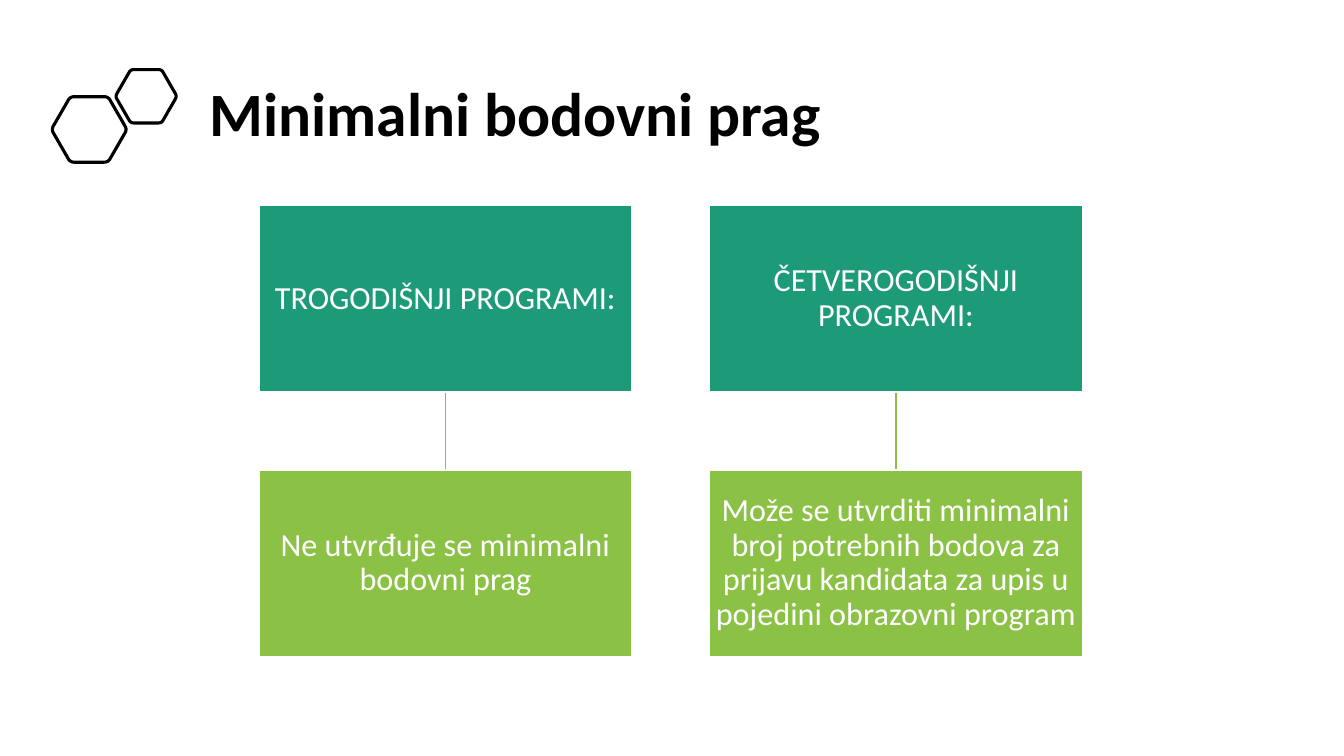
from dataclasses import dataclass
from math import cos, pi, sin

from lxml.etree import SubElement as Sub
from pptx import Presentation
from pptx.dml.color import RGBColor as RGB
from pptx.enum.shapes import MSO_CONNECTOR as Conn, MSO_SHAPE as Kind
from pptx.enum.text import MSO_ANCHOR as Anchor, PP_ALIGN as Align
from pptx.oxml.ns import qn
from pptx.util import Pt


@dataclass(frozen=True)
class Theme:
    ink: RGB = RGB(0, 0, 0)
    paper: RGB = RGB(255, 255, 255)
    teal: RGB = RGB(0x1D, 0x9A, 0x78)
    lime: RGB = RGB(0x8B, 0xC1, 0x45)
    face: str = "Calibri"
    head: float = 44
    body: float = 23
    bold: float = 2.25
    thin: float = 1


THEME = Theme()
LEFT, TOP, WIDE, HIGH = 185.1, 146.9, 266.4, 133.2
STEP, DROP = 321.8, 188.7
PAIRS = [
    ("TROGODIŠNJI PROGRAMI:", "Ne utvrđuje se minimalni bodovni prag"),
    ("ČETVEROGODIŠNJI PROGRAMI:",
     "Može se utvrditi minimalni broj potrebnih bodova za prijavu "
     "kandidata za upis u pojedini obrazovni program"),
]
HEXES = [(63.7, 92.5, 27), (104.4, 68.8, 22)]


def assign(item, values):
    for name, value in values.items():
        setattr(item, name, value)


def stroke(line, color, width):
    line.color.rgb = color
    line.width = Pt(width)


def write(shape, text, size, color, bold, align, pad):
    frame = shape.text_frame
    sides = {f"margin_{side}": Pt(gap) for side, gap in pad.items()}
    assign(frame, {"word_wrap": True, "vertical_anchor": Anchor.MIDDLE, **sides})
    para = frame.paragraphs[0]
    assign(para, {"text": text, "alignment": align, "line_spacing": 0.9})
    font = para.runs[0].font
    assign(font, {"name": THEME.face, "size": Pt(size), "bold": bold})
    font.color.rgb = color


def title(slide, text):
    box = slide.shapes.add_textbox(Pt(142.6), Pt(41), Pt(778.3), Pt(84.2))
    pad = dict(left=7.2, right=7.2, top=3.6, bottom=3.6)
    write(box, text, THEME.head, THEME.ink, True, Align.LEFT, pad)


def hexagon(slide, mid_x, mid_y, radius):
    """Trace a regular hexagon, rounding each corner with a sampled quadratic curve."""
    ends = [(mid_x + radius * cos(i * pi / 3), mid_y + radius * sin(i * pi / 3))
            for i in range(6)]
    dots = []
    for i, tip in enumerate(ends):
        start, stop = ([t + 0.1 * (n - t) for t, n in zip(tip, near)]
                       for near in (ends[i - 1], ends[(i + 1) % 6]))
        for k in range(7):
            u = k / 6
            dots.append(tuple(Pt((1 - u) ** 2 * a + 2 * u * (1 - u) * t + u * u * b)
                              for a, t, b in zip(start, tip, stop)))
    path = slide.shapes.build_freeform(*dots[0])
    path.add_line_segments(dots[1:], close=True)
    shape = path.convert_to_shape()
    shape.shadow.inherit = False
    shape.fill.background()
    stroke(shape.line, THEME.ink, THEME.bold)


def link(slide, x):
    line = slide.shapes.add_connector(
        Conn.STRAIGHT, Pt(x), Pt(TOP + HIGH), Pt(x), Pt(TOP + DROP))
    stroke(line.line, THEME.lime, THEME.thin)
    Sub(line._element.spPr, qn("a:effectLst"))


def card(slide, x, y, text, fill):
    box = slide.shapes.add_shape(Kind.RECTANGLE, Pt(x), Pt(y), Pt(WIDE), Pt(HIGH))
    box.shadow.inherit = False
    box.fill.solid()
    box.fill.fore_color.rgb = fill
    stroke(box.line, THEME.paper, THEME.thin)
    pad = dict.fromkeys(("left", "right", "top", "bottom"), 1.4)
    write(box, text, THEME.body, THEME.paper, False, Align.CENTER, pad)


def main():
    deck = Presentation()
    assign(deck, {"slide_width": Pt(960), "slide_height": Pt(540)})
    slide = deck.slides.add_slide(deck.slide_layouts[6])
    title(slide, "Minimalni bodovni prag")
    for spot in HEXES:
        hexagon(slide, *spot)
    for i, (name, rule) in enumerate(PAIRS):
        x = LEFT + i * STEP
        link(slide, x + WIDE / 2)
        card(slide, x, TOP, name, THEME.teal)
        card(slide, x, TOP + DROP, rule, THEME.lime)
    deck.save("out.pptx")


if __name__ == "__main__":
    main()
